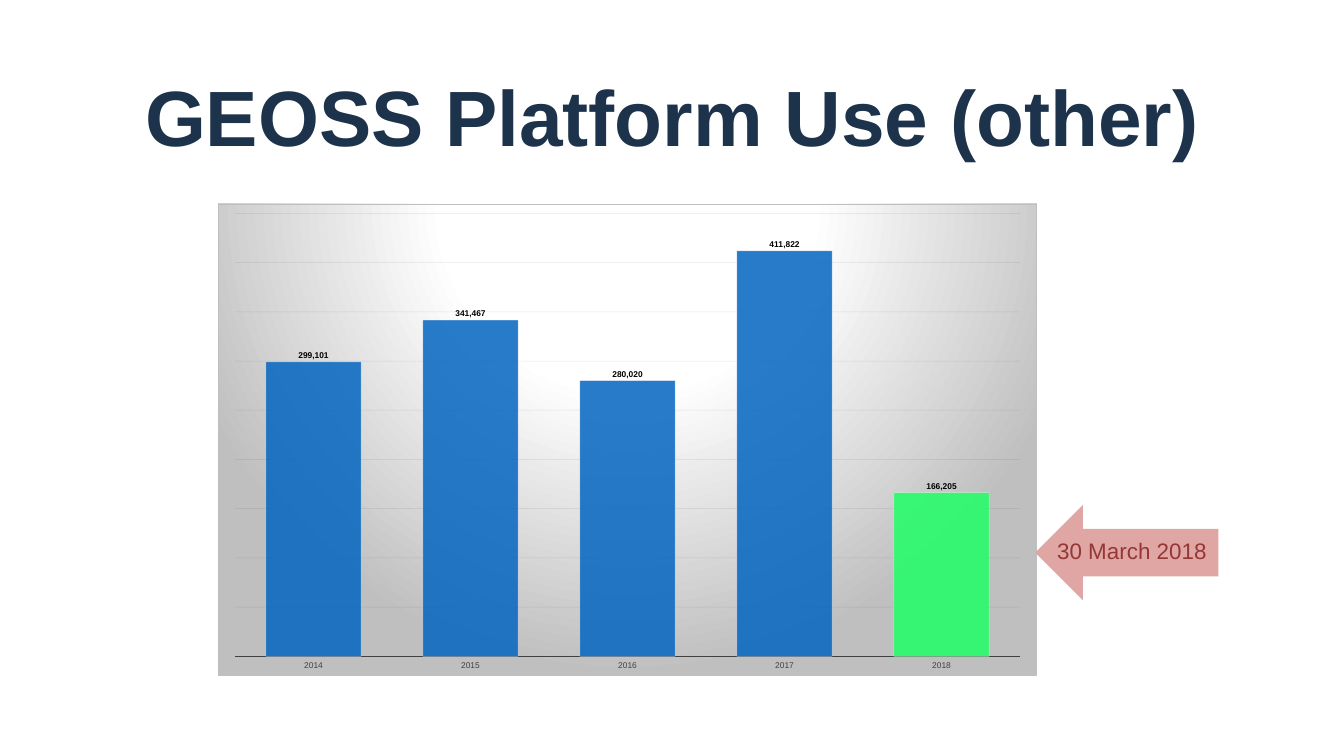
from dataclasses import dataclass

from lxml import etree
from pptx import Presentation
from pptx.chart.data import CategoryChartData
from pptx.dml.color import RGBColor
from pptx.enum.chart import XL_CHART_TYPE as ChartType
from pptx.enum.chart import XL_LABEL_POSITION as LabelPosition
from pptx.enum.chart import XL_TICK_LABEL_POSITION as TickLabels
from pptx.enum.chart import XL_TICK_MARK as TickMark
from pptx.enum.shapes import MSO_SHAPE as Shape
from pptx.enum.text import MSO_ANCHOR as Anchor
from pptx.enum.text import PP_ALIGN as Align
from pptx.oxml import parse_xml
from pptx.oxml.ns import nsdecls, qn
from pptx.util import Pt


@dataclass(frozen=True)
class Theme:
    font: str = "Arial"
    title: str = "1D324B"
    bar: str = "0365C0"
    current_bar: str = "1FFF66"
    bar_edge: str = "FFFFFF"
    axis: str = "404040"
    grid: str = "0D0D0D"
    label: str = "000000"
    panel: str = "FFFFFF"
    panel_edge: str = "BFBFBF"
    arrow: str = "DFA6A4"
    arrow_text: str = "953735"
    title_size: int = 112
    note_size: int = 32
    chart_size: int = 12


THEME = Theme()
USE_BY_YEAR = {"2014": 299101, "2015": 341467, "2016": 280020,
               "2017": 411822, "2018": 166205}


def style_font(font, size, color, bold=False):
    font.name, font.size, font.bold = THEME.font, Pt(size), bold
    font.color.rgb = RGBColor.from_string(color)


def paint(fill, color):
    fill.solid()
    fill.fore_color.rgb = RGBColor.from_string(color)


def draw_line(line, color, width):
    paint(line.fill, color)
    line.width = Pt(width)


def set_opacity(chart, path, percent):
    for color in chart.element.xpath(path):
        etree.SubElement(color, qn("a:alpha")).set("val", str(percent * 1000))


def add_text(shapes, box, text, size, color, bold=False, inset=4):
    frame = shapes.add_textbox(*map(Pt, box)).text_frame
    frame.word_wrap = True
    frame.vertical_anchor = Anchor.MIDDLE
    frame.margin_left = frame.margin_right = Pt(inset)
    frame.margin_top = frame.margin_bottom = Pt(4)
    para = frame.paragraphs[0]
    para.alignment = Align.CENTER
    span = para.add_run()
    span.text = text
    style_font(span.font, size, color, bold)


def shade_panel(chart):
    """Give the chart area a radial gradient and a thin border."""
    stops = "".join(
        f'<a:gs pos="{position * 1000}"><a:srgbClr val="{color}"/></a:gs>'
        for position, color in ((0, THEME.panel), (39, THEME.panel),
                                (100, THEME.panel_edge)))
    panel = parse_xml(
        f'<c:spPr {nsdecls("c", "a")}><a:gradFill><a:gsLst>{stops}</a:gsLst>'
        '<a:path path="circle"><a:fillToRect l="50000" t="-80000" r="50000" '
        'b="180000"/></a:path></a:gradFill>'
        f'<a:ln w="{Pt(0.75)}"><a:solidFill><a:srgbClr val="{THEME.panel_edge}"/>'
        '</a:solidFill></a:ln></c:spPr>')
    chart.element.find(qn("c:chart")).addnext(panel)


def place_plot(chart, x, y, w, h):
    """Fix the inner plot area, in fractions of the chart."""
    plot_area = chart.element.xpath(".//c:plotArea")[0]
    for layout in plot_area.findall(qn("c:layout")):
        plot_area.remove(layout)
    sizes = "".join(f'<c:{name} val="{value}"/>' for name, value in
                    (("x", x), ("y", y), ("w", w), ("h", h)))
    plot_area.insert(0, parse_xml(
        f'<c:layout {nsdecls("c")}><c:manualLayout><c:layoutTarget val="inner"/>'
        '<c:xMode val="edge"/><c:yMode val="edge"/>'
        f'{sizes}</c:manualLayout></c:layout>'))


def style_axes(chart):
    years, counts = chart.category_axis, chart.value_axis
    years.major_tick_mark = years.minor_tick_mark = TickMark.NONE
    years.tick_label_position = TickLabels.LOW
    style_font(years.tick_labels.font, THEME.chart_size, THEME.axis)
    draw_line(years.format.line, THEME.axis, 1.5)
    counts.minimum_scale, counts.maximum_scale = 0, 450000
    counts.major_unit = 50000
    counts.tick_labels.number_format = "#,##0"
    counts.tick_labels.number_format_is_linked = False
    counts.visible = False
    counts.has_major_gridlines = True
    draw_line(counts.major_gridlines.format.line, THEME.grid, 0.75)
    set_opacity(chart, ".//c:majorGridlines//a:srgbClr", 10)


def style_bars(chart):
    plot = chart.plots[0]
    plot.gap_width = 65
    plot.vary_by_categories = False
    series = plot.series[0]
    series.invert_if_negative = False
    current = series.points[len(USE_BY_YEAR) - 1]
    for bar, color in ((series, THEME.bar), (current, THEME.current_bar)):
        paint(bar.format.fill, color)
        draw_line(bar.format.line, THEME.bar_edge, 0.75)
    set_opacity(chart, ".//c:ser//c:spPr/a:solidFill/a:srgbClr", 85)
    set_opacity(chart, ".//c:ser//c:spPr/a:ln//a:srgbClr", 50)
    labels = series.data_labels
    labels.show_value = True
    labels.position = LabelPosition.OUTSIDE_END
    labels.number_format, labels.number_format_is_linked = "#,##0", False
    style_font(labels.font, THEME.chart_size, THEME.label, bold=True)


def add_use_chart(page, box):
    data = CategoryChartData(number_format="#,##0")
    data.categories = list(USE_BY_YEAR)
    data.add_series("Series 1", list(USE_BY_YEAR.values()))
    chart = page.shapes.add_chart(
        ChartType.COLUMN_CLUSTERED, *map(Pt, box), data).chart
    chart.has_title = chart.has_legend = False
    style_font(chart.font, 10, THEME.label)
    style_axes(chart)
    style_bars(chart)
    shade_panel(chart)
    place_plot(chart, 0.02, 0.02, 0.96, 0.94)


def add_date_arrow(page, box):
    left, top, width, height = box
    group = page.shapes.add_group_shape()
    arrow = group.shapes.add_shape(Shape.LEFT_ARROW, *map(Pt, box))
    arrow.shadow.inherit = False
    paint(arrow.fill, THEME.arrow)
    arrow.line.fill.background()
    text_height = 46
    text_top = top + (height - text_height) / 2 - 3.5
    add_text(group.shapes, (left + 11.5, text_top, width - 8.5, text_height),
             "30 March 2018", THEME.note_size, THEME.arrow_text, inset=7)


def main():
    deck = Presentation()
    deck.slide_width, deck.slide_height = Pt(1920), Pt(1080)
    page = deck.slides.add_slide(deck.slide_layouts[6])
    add_text(page.shapes, (133, 75, 1654, 180), "GEOSS Platform Use (other)",
             THEME.title_size, THEME.title, bold=True)
    add_use_chart(page, (312, 291, 1169, 674))
    add_date_arrow(page, (1479, 721.5, 261.5, 136))
    deck.save("out.pptx")


if __name__ == "__main__":
    main()
